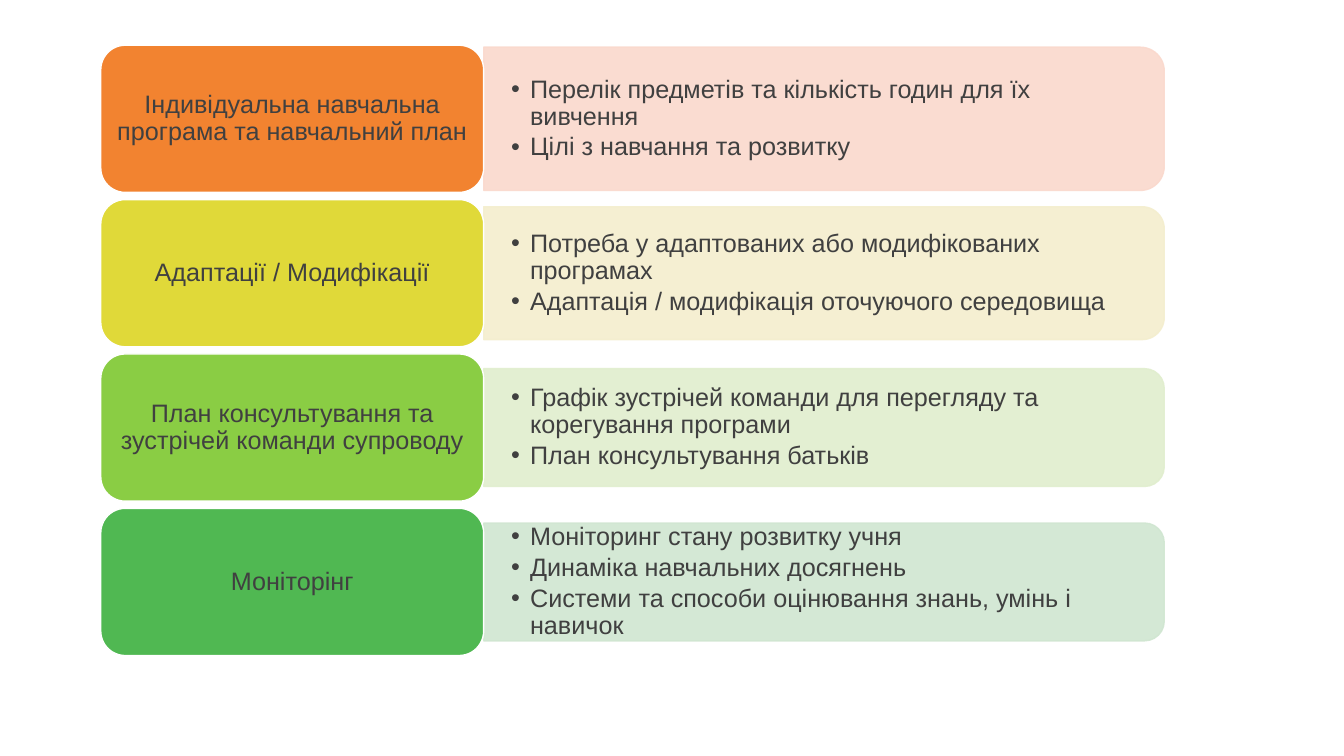
from lxml.etree import SubElement
from pptx import Presentation
from pptx.dml.color import RGBColor
from pptx.enum.shapes import MSO_SHAPE
from pptx.enum.text import MSO_ANCHOR, PP_ALIGN
from pptx.oxml.ns import qn
from pptx.util import Cm, Pt

COLORS = {
    "text": "404040", "white": "FFFFFF",
    "orange": "F28330", "orange_pale": "FAD9CD",
    "yellow": "E0D939", "yellow_pale": "F4EECE",
    "lime": "8ACD44", "lime_pale": "E1EECE",
    "green": "50B852", "green_pale": "D0E6D1",
}
ROWS = [
    ("orange", 3.61, "Індивідуальна навчальна програма та навчальний план",
     ["Перелік предметів та кількість годин для їх вивчення",
      "Цілі з навчання та розвитку"]),
    ("yellow", 3.35, "Адаптації / Модифікації",
     ["Потреба у адаптованих або модифікованих програмах",
      "Адаптація / модифікація оточуючого середовища"]),
    ("lime", 2.97, "План консультування та зустрічей команди супроводу",
     ["Графік зустрічей команди для перегляду та корегування програми",
      "План консультування батьків"]),
    ("green", 2.97, "Моніторінг",
     ["Моніторинг стану розвитку учня",
      "Динаміка навчальних досягнень",
      "Системи та способи оцінювання знань, умінь і навичок"]),
]
LEFT, TOP, PITCH = 2.54, 1.14, 3.89
LABEL_WIDTH, LABEL_HEIGHT = 9.65, 3.71
PANEL_LEFT, PANEL_WIDTH = LEFT + LABEL_WIDTH, 17.15


def paint(shape, fill, line, opacity=100):
    shape.shadow.inherit = False
    shape.fill.solid()
    shape.fill.fore_color.rgb = RGBColor.from_string(COLORS[fill])
    shape.line.color.rgb = RGBColor.from_string(COLORS[line])
    shape.line.width = Pt(1)
    if opacity < 100:
        properties = shape.fill._xPr
        for solid in properties.iter(qn("a:solidFill")):
            SubElement(solid[0], qn("a:alpha"), val=str(opacity * 1000))


def write(box, lines, margin_x, margin_y, bullets=False, align=PP_ALIGN.LEFT):
    """Fill the box with one paragraph per line, centred vertically."""
    frame = box.text_frame
    frame.word_wrap = True
    frame.vertical_anchor = MSO_ANCHOR.MIDDLE
    frame.margin_left = frame.margin_right = Cm(margin_x)
    frame.margin_top = frame.margin_bottom = Cm(margin_y)
    for index, line in enumerate(lines):
        para = frame.paragraphs[0] if index == 0 else frame.add_paragraph()
        para.alignment = align
        para.line_spacing = 0.9
        if bullets:
            para.space_after = Pt(2.5)
            properties = para._p.get_or_add_pPr()
            properties.set("marL", str(Cm(0.48)))
            properties.set("indent", str(-Cm(0.48)))
            SubElement(properties, qn("a:buFont"), typeface="Arial")
            SubElement(properties, qn("a:buChar"), char="•")
        span = para.add_run()
        span.text = line
        span.font.name = "Arial"
        span.font.size = Pt(18)
        span.font.color.rgb = RGBColor.from_string(COLORS["text"])


deck = Presentation()
deck.slide_width, deck.slide_height = Cm(33.87), Cm(19.05)
page = deck.slides.add_slide(deck.slide_layouts[6])

for row, (color, panel_height, title, items) in enumerate(ROWS):
    top = TOP + row * PITCH
    middle = top + LABEL_HEIGHT / 2

    # The panel is an upright shape turned a quarter, so its round corners face right.
    panel = page.shapes.add_shape(
        MSO_SHAPE.ROUND_2_SAME_RECTANGLE,
        Cm(PANEL_LEFT + (PANEL_WIDTH - panel_height) / 2), Cm(middle - PANEL_WIDTH / 2),
        Cm(panel_height), Cm(PANEL_WIDTH))
    panel.rotation = 90
    paint(panel, f"{color}_pale", f"{color}_pale", opacity=90)

    text_height = panel_height - 0.32
    details = page.shapes.add_textbox(
        Cm(PANEL_LEFT), Cm(middle - text_height / 2), Cm(PANEL_WIDTH - 0.16), Cm(text_height))
    write(details, items, 0.69, 0.36, bullets=True)

    label = page.shapes.add_shape(
        MSO_SHAPE.ROUNDED_RECTANGLE, Cm(LEFT), Cm(top), Cm(LABEL_WIDTH), Cm(LABEL_HEIGHT))
    paint(label, color, "white")
    write(label, [title], 0.18, 0.1, align=PP_ALIGN.CENTER)

deck.save("out.pptx")
